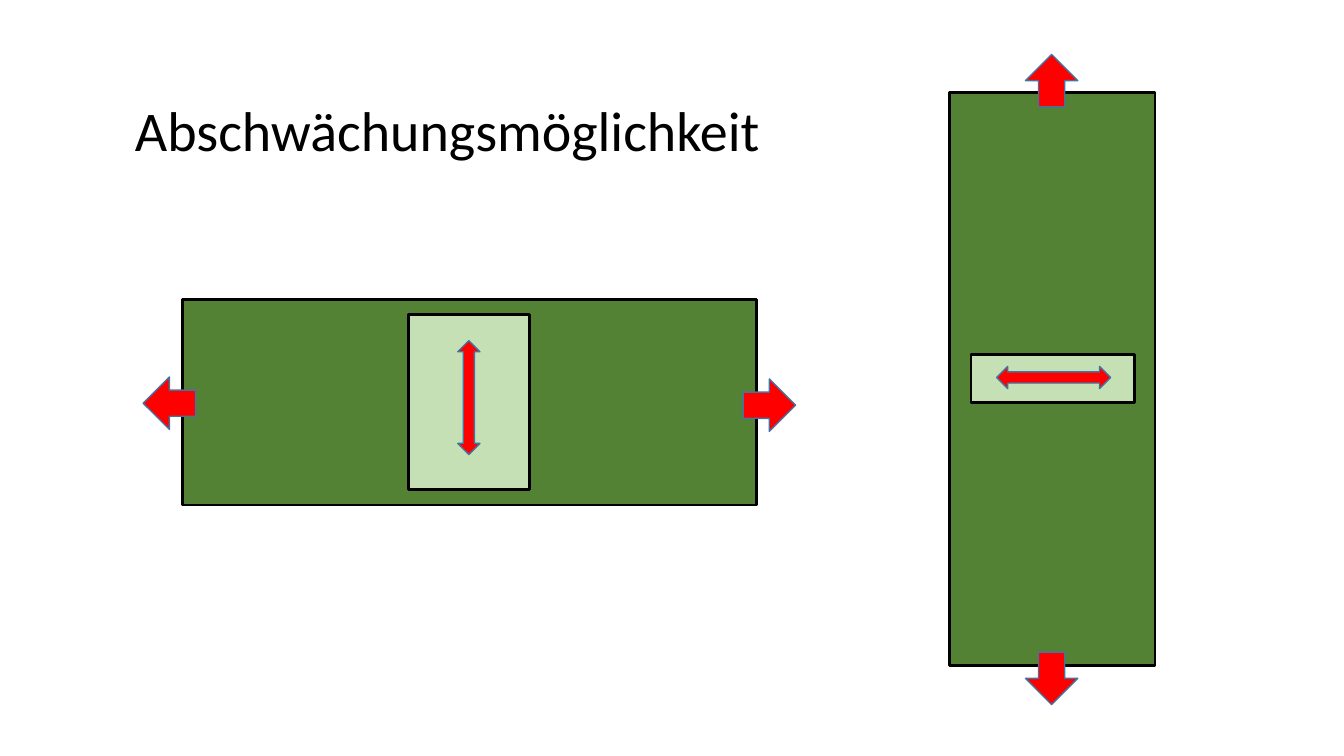
from dataclasses import dataclass

from pptx import Presentation
from pptx import util as u
from pptx.dml.color import RGBColor
from pptx.enum import shapes, text

PX = 9144  # EMU per px, 100 px to the inch
COLORS = {
    "bar": "548235",
    "core": "C5E0B4",
    "arrow": "FF0000",
    "rim": "43739E",
    "ink": "000000",
}
KIND = shapes.MSO_SHAPE


@dataclass(frozen=True)
class Style:
    kind: int
    fill: str
    line: str
    weight: int


@dataclass(frozen=True)
class Part:
    style: Style
    left: int
    top: int
    width: int
    height: int
    turn: int = 0


BAR = Style(KIND.RECTANGLE, "bar", "ink", 2)
CORE = Style(KIND.RECTANGLE, "core", "ink", 2)
SPAN = Style(KIND.UP_DOWN_ARROW, "arrow", "rim", 1)
PULL = Style(KIND.DOWN_ARROW, "arrow", "rim", 1)

# Bars and their light cores, behind the title
BLOCKS = [
    Part(BAR, 181, 297, 569, 204),
    Part(BAR, 759, 274, 569, 204, 90),
    Part(CORE, 405, 312, 120, 174),
    Part(CORE, 963, 352, 162, 47),
]

# Double arrows inside the cores, single arrows at the bar ends
ARROWS = [
    Part(SPAN, 1034, 318, 22, 113, 90),
    Part(SPAN, 454, 338, 22, 113),
    Part(PULL, 1017, 647, 52, 52),
    Part(PULL, 1017, 54, 52, 52, 180),
    Part(PULL, 142, 374, 52, 52, 90),
    Part(PULL, 737, 376, 52, 52, 270),
]


def color(name: str) -> RGBColor:
    return RGBColor.from_string(COLORS[name])


def draw(slide, part: Part) -> None:
    style = part.style
    shape = slide.shapes.add_shape(
        style.kind, part.left * PX, part.top * PX, part.width * PX, part.height * PX
    )
    shape.rotation = part.turn
    shape.shadow.inherit = False
    shape.fill.solid()
    shape.fill.fore_color.rgb = color(style.fill)
    shape.line.color.rgb = color(style.line)
    shape.line.width = u.Pt(style.weight)


def title(slide, words: str) -> None:
    box = slide.shapes.add_textbox(124 * PX, 90 * PX, 678 * PX, 77 * PX)
    frame = box.text_frame
    frame.word_wrap = True
    frame.auto_size = text.MSO_AUTO_SIZE.SHAPE_TO_FIT_TEXT
    frame.text = words
    font = frame.paragraphs[0].runs[0].font
    font.name = "Calibri"
    font.size = u.Pt(40)
    font.color.rgb = color("ink")


def main() -> None:
    deck = Presentation()
    deck.slide_width = 1333 * PX
    deck.slide_height = 750 * PX
    slide = deck.slides.add_slide(deck.slide_layouts[6])
    for block in BLOCKS:
        draw(slide, block)
    title(slide, "Abschwächungsmöglichkeit")
    for arrow in ARROWS:
        draw(slide, arrow)
    deck.save("out.pptx")


if __name__ == "__main__":
    main()
